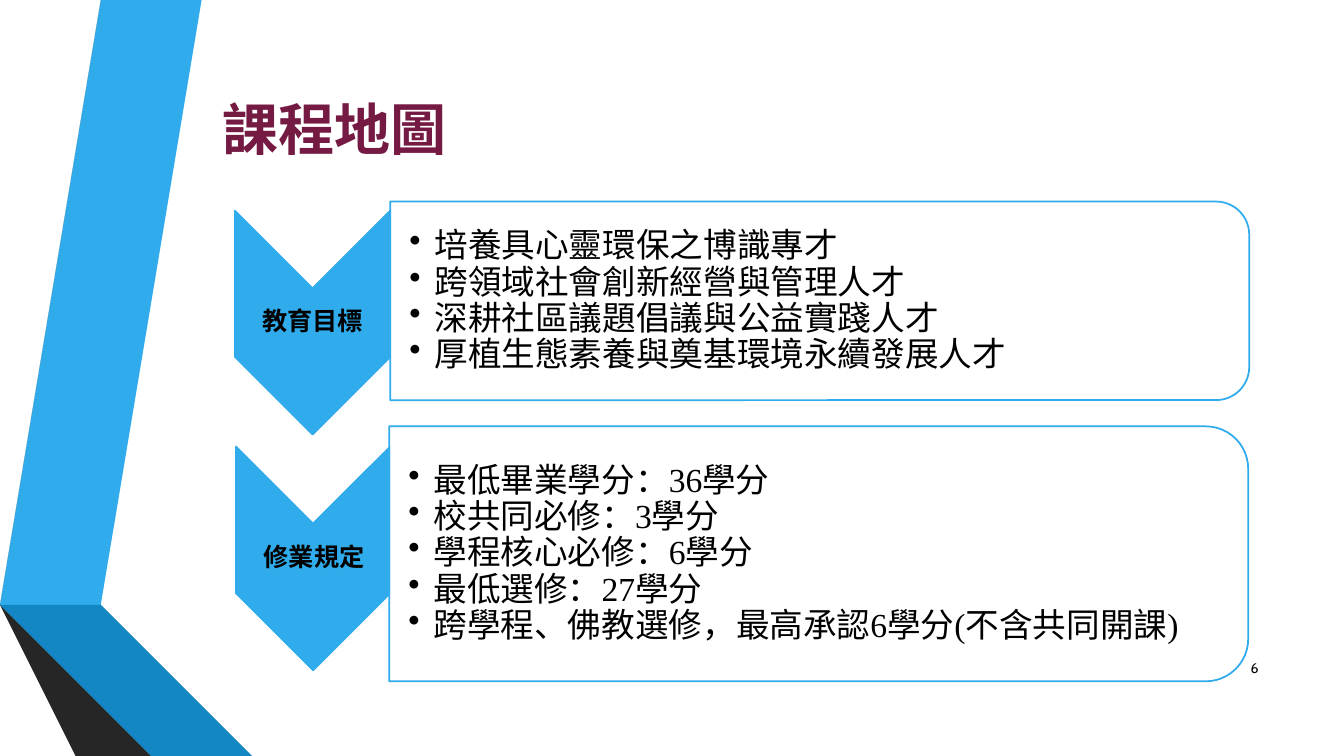
from lxml.etree import SubElement
from pptx import Presentation
from pptx.dml.color import RGBColor
from pptx.enum.shapes import MSO_SHAPE
from pptx.enum.text import MSO_ANCHOR, PP_ALIGN
from pptx.oxml.ns import qn
from pptx.util import Inches, Pt

BLUE = RGBColor(0x30, 0xAC, 0xEC)
MID_BLUE = RGBColor(0x12, 0x87, 0xC3)
DEEP_BLUE = RGBColor(0x0C, 0x5A, 0x82)
GRAY = RGBColor(0x59, 0x59, 0x59)
DARK_GRAY = RGBColor(0x40, 0x40, 0x40)
CHARCOAL = RGBColor(0x26, 0x26, 0x26)
PLUM = RGBColor(0x75, 0x1A, 0x43)
BLACK = RGBColor(0, 0, 0)
WHITE = RGBColor(0xFF, 0xFF, 0xFF)

RIBBONS = [
    (BLUE, [(0.5, 5.78), (0.77, 5.83), (1.73, 0), (1.45, 0)]),
    (GRAY, [(1.39, 0), (1.11, 0), (0.16, 5.73), (0.44, 5.77)]),
    (CHARCOAL, [(0.16, 5.73), (1.45, 7.5), (1.51, 7.5)]),
    (DEEP_BLUE, [(0.5, 5.79), (2.08, 7.5), (2.14, 7.5)]),
    (MID_BLUE, [(0.5, 5.78), (0.5, 5.79), (2.14, 7.5), (2.83, 7.5), (0.77, 5.83)]),
    (DARK_GRAY, [(2.02, 7.5), (0.48, 5.83), (0.44, 5.77), (0.16, 5.73), (1.51, 7.5)]),
]

SECTIONS = [
    {
        "label": "教育目標",
        "chevron": (2.33, 2.09, 1.54, 2.22),
        "label_box": (2.33, 2.86, 1.54, 0.68),
        "panel": (3.87, 2.0, 8.52, 1.97),
        "body_box": (3.87, 2.1, 8.43, 1.78),
        "font": "Cabin",
        "items": [
            "培養具心靈環保之博識專才",
            "跨領域社會創新經營與管理人才",
            "深耕社區議題倡議與公益實踐人才",
            "厚植生態素養與奠基環境永續發展人才",
        ],
    },
    {
        "label": "修業規定",
        "chevron": (2.34, 4.43, 1.53, 2.22),
        "label_box": (2.35, 5.19, 1.53, 0.7),
        "panel": (3.86, 4.23, 8.52, 2.53),
        "body_box": (3.86, 4.35, 8.4, 2.29),
        "font": "Times New Roman",
        "items": [
            "最低畢業學分：36學分",
            "校共同必修：3學分",
            "學程核心必修：6學分",
            "最低選修：27學分",
            "跨學程、佛教選修，最高承認6學分(不含共同開課)",
        ],
    },
]


class SlideBuilder:
    font = "Cabin"
    line_width = Pt(1.25)

    def __init__(self, presentation):
        self.slide = presentation.slides.add_slide(presentation.slide_layouts[5])

    def format_runs(self, paragraph, size, color=BLACK, bold=False, font=None):
        for run in paragraph.runs:
            run.font.name = font or self.font
            run.font.size = Pt(size)
            run.font.bold = bold
            run.font.color.rgb = color

    def title(self, text, box):
        title = self.slide.shapes.title
        title.left, title.top, title.width, title.height = map(Inches, box)
        text_frame = title.text_frame
        text_frame.text = text
        text_frame.vertical_anchor = MSO_ANCHOR.TOP
        paragraph = text_frame.paragraphs[0]
        paragraph.alignment = PP_ALIGN.LEFT
        self.format_runs(paragraph, 40, PLUM, bold=True)

    def ribbon(self, color, points):
        builder = self.slide.shapes.build_freeform(*points[0], scale=Inches(1))
        builder.add_line_segments(points[1:], close=True)
        shape = builder.convert_to_shape()
        shape.shadow.inherit = False
        shape.fill.solid()
        shape.fill.fore_color.rgb = color
        shape.line.fill.background()

    def turned_shape(self, preset, box, color, opacity=100):
        left, top, width, height = box
        shift = (width - height) / 2
        frame = (left + shift, top - shift, height, width)
        shape = self.slide.shapes.add_shape(preset, *map(Inches, frame))
        shape.rotation = 90
        shape.shadow.inherit = False
        shape.fill.solid()
        shape.fill.fore_color.rgb = color
        if opacity < 100:
            color_element = shape.fill._xPr.find(qn("a:solidFill"))[0]
            SubElement(color_element, qn("a:alpha"), val=str(opacity * 1000))
        shape.line.color.rgb = BLUE
        shape.line.width = self.line_width

    def text_box(self, lines, box, margins):
        shape = self.slide.shapes.add_textbox(*map(Inches, box))
        text_frame = shape.text_frame
        text_frame.word_wrap = True
        text_frame.vertical_anchor = MSO_ANCHOR.MIDDLE
        left, other = map(Inches, margins)
        text_frame.margin_left = left
        text_frame.margin_top = text_frame.margin_right = text_frame.margin_bottom = other
        text_frame.text = "\n".join(lines)
        return text_frame.paragraphs

    def label(self, text, box):
        for paragraph in self.text_box([text], box, (0.01, 0.01)):
            paragraph.alignment = PP_ALIGN.CENTER
            paragraph.line_spacing = 0.9
            self.format_runs(paragraph, 18, bold=True)

    def bullets(self, items, box, font):
        for paragraph in self.text_box(items, box, (0.19, 0.02)):
            paragraph.line_spacing = 0.9
            properties = paragraph._p.get_or_add_pPr()
            properties.set("marL", str(Inches(0.25)))
            properties.set("indent", str(-Inches(0.25)))
            SubElement(properties, qn("a:buChar"), char="•")
            self.format_runs(paragraph, 24, font=font)

    def page_number(self, text, box):
        for paragraph in self.text_box([text], box, (0.1, 0.1)):
            paragraph.alignment = PP_ALIGN.RIGHT
            self.format_runs(paragraph, 10)


def main():
    presentation = Presentation()
    presentation.slide_width = Inches(13.33)
    presentation.slide_height = Inches(7.5)
    builder = SlideBuilder(presentation)
    for color, points in RIBBONS:
        builder.ribbon(color, points)
    builder.page_number("6", (11.98, 6.43, 0.6, 0.4))
    builder.title("課程地圖", (2.11, 0.89, 2.46, 0.77))
    for section in SECTIONS:
        builder.turned_shape(MSO_SHAPE.CHEVRON, section["chevron"], BLUE)
        builder.label(section["label"], section["label_box"])
        builder.turned_shape(MSO_SHAPE.ROUND_2_SAME_RECTANGLE, section["panel"], WHITE, 90)
        builder.bullets(section["items"], section["body_box"], section["font"])
    presentation.save("out.pptx")


if __name__ == "__main__":
    main()
